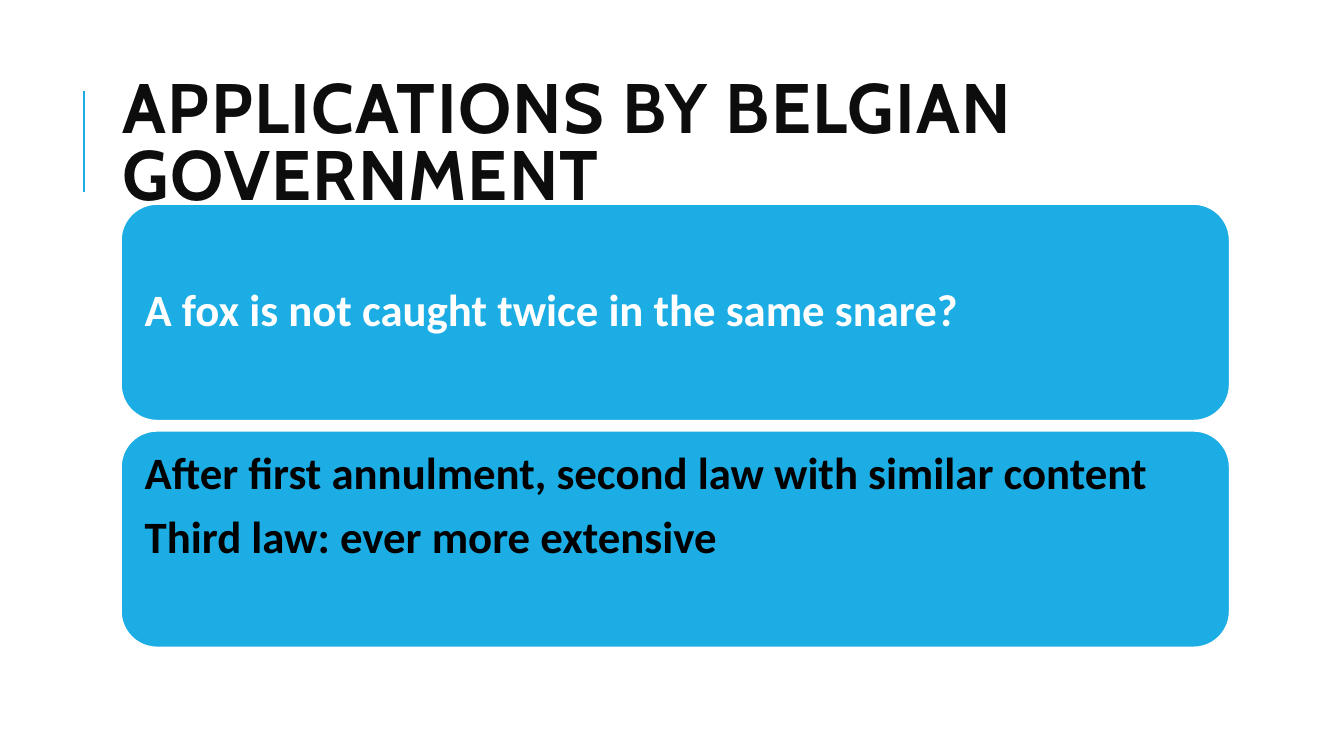
from pptx import Presentation
from pptx.dml.color import RGBColor
from pptx.enum.shapes import MSO_CONNECTOR as LINK, MSO_SHAPE as SHAPE
from pptx.enum.text import MSO_ANCHOR as ANCHOR, MSO_AUTO_SIZE as FIT, PP_ALIGN as ALIGN
from pptx.oxml.ns import qn
from pptx.util import Pt

BLUE = RGBColor(0x1C, 0xAD, 0xE4)
WHITE = RGBColor(0xFF, 0xFF, 0xFF)
BLACK = RGBColor(0, 0, 0)
INK = RGBColor(0x0D, 0x0D, 0x0D)

LEFT, TOP = 86.4, 145.7
WIDTH, HEIGHT = 792, 154.8
STEP = 162
PAD = 9.4

CARDS = [
    # lines, text colour, extra room below the text
    (["A fox is not caught twice in the same snare?"], WHITE, 0),
    (["After first annulment, second law with similar content",
      "Third law: ever more extensive"], BLACK, 46.4),
]


def add_run(para, text, font, size, color):
    run = para.add_run()
    run.text = text
    run.font.name = font
    run.font.size = Pt(size)
    run.font.bold = True
    run.font.color.rgb = color
    return run


def add_rule(slide, x, top, bottom):
    rule = slide.shapes.add_connector(LINK.STRAIGHT, Pt(x), Pt(bottom), Pt(x), Pt(top))
    rule.line.color.rgb = BLUE
    rule.line.width = Pt(1.5)
    props = rule._element.spPr
    props.append(props.makeelement(qn("a:effectLst"), {}))


def set_title(slide, text):
    title = slide.shapes.title
    title.left, title.top = Pt(80.6), Pt(46.1)
    title.width, title.height = Pt(765.4), Pt(118.1)
    frame = title.text_frame
    frame.word_wrap = True
    frame.auto_size = FIT.NONE
    frame.vertical_anchor = ANCHOR.MIDDLE
    para = frame.paragraphs[0]
    para.alignment = ALIGN.LEFT
    para.line_spacing = 0.8
    run = add_run(para, text, "Cabin", 50, INK)
    run.font._element.set("spc", "100")  # letter spacing of 1 pt


def add_card(slide, top, lines, color, room):
    card = slide.shapes.add_shape(
        SHAPE.ROUNDED_RECTANGLE, Pt(LEFT), Pt(top), Pt(WIDTH), Pt(HEIGHT))
    card.shadow.inherit = False
    card.fill.solid()
    card.fill.fore_color.rgb = BLUE
    card.line.color.rgb = WHITE
    card.line.width = Pt(1.25)
    frame = card.text_frame
    frame.word_wrap = True
    frame.vertical_anchor = ANCHOR.MIDDLE
    frame.margin_left = frame.margin_right = frame.margin_top = Pt(PAD)
    frame.margin_bottom = Pt(PAD + room)
    for i, line in enumerate(lines):
        para = frame.add_paragraph() if i else frame.paragraphs[0]
        para.alignment = ALIGN.LEFT
        para.line_spacing = 0.9
        para.space_after = Pt(11.2)
        add_run(para, line, "Calibri", 32, color)


def main():
    deck = Presentation()
    deck.slide_width, deck.slide_height = Pt(960), Pt(540)
    slide = deck.slides.add_slide(deck.slide_layouts[5])

    # Heading with its side rule
    add_rule(slide, 60, 64.8, 136.8)
    set_title(slide, "APPLICATIONS BY BELGIAN GOVERNMENT")

    # Stacked cards
    for i, (lines, color, room) in enumerate(CARDS):
        add_card(slide, TOP + i * STEP, lines, color, room)

    deck.save("out.pptx")


if __name__ == "__main__":
    main()
